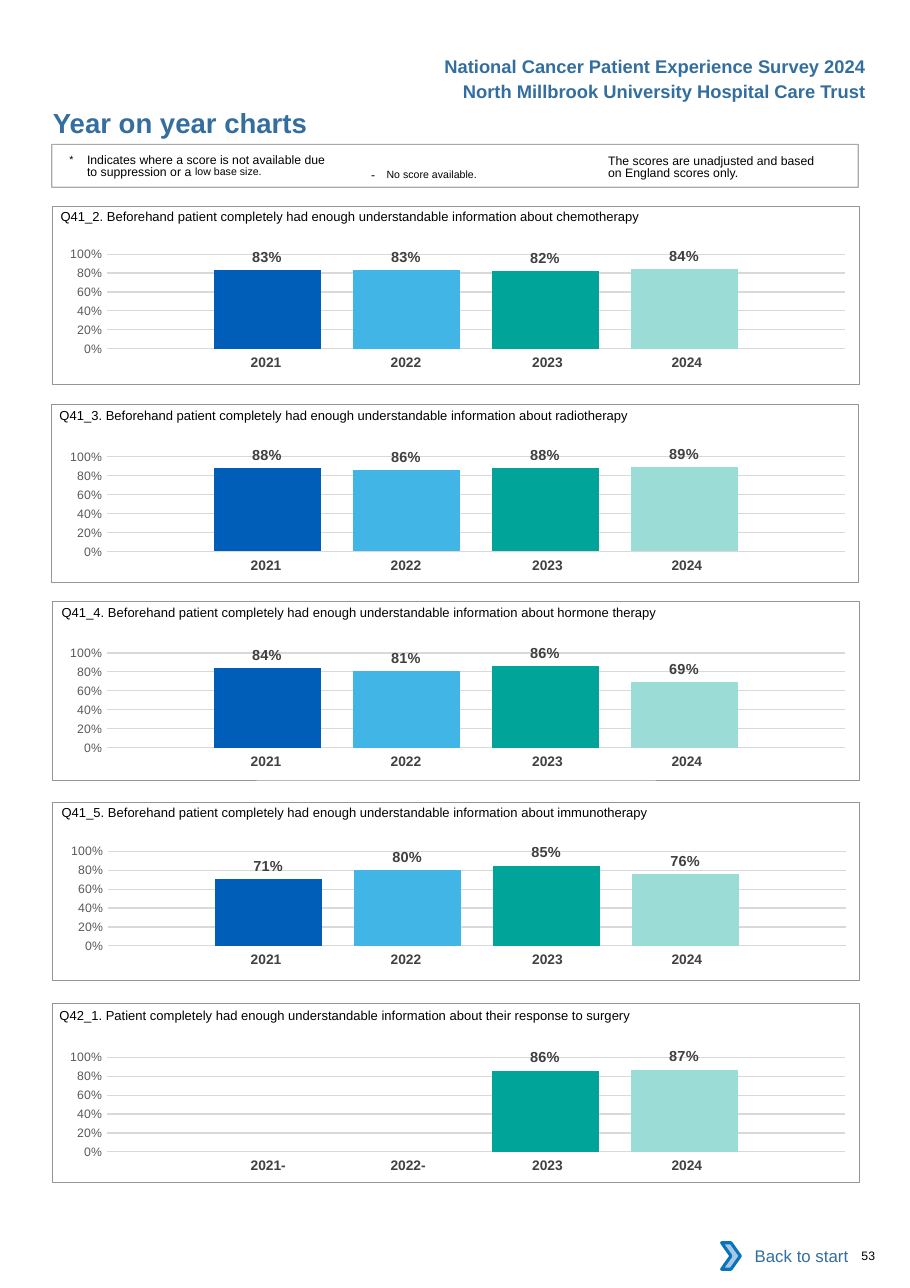
from lxml import etree
from pptx import Presentation
from pptx.chart import data
from pptx.dml import color
from pptx.enum import chart as ec, shapes, text
from pptx.oxml import ns, parse_xml
from pptx.util import Pt

HUES = {
    "ink": "000000", "head": "336E9F", "frame": "939598", "white": "FFFFFF",
    "year": "414042", "tick": "595959", "label": "404040", "grid": "D9D9D9",
    "arrow": "A8C7E9", "edge": "0A74BB",
}
BARS = ["005EB8", "41B6E6", "00A499", "9CDCD7"]
PLAIN = "{2D5ABB26-0587-4C30-8999-92F81FD0307C}"
ALIGN = {"l": text.PP_ALIGN.LEFT, "c": text.PP_ALIGN.CENTER,
         "r": text.PP_ALIGN.RIGHT}
ENOUGH = "completely had enough understandable information about"
INSET = (7.2, 3.6, 7.2, 3.6)


def rgb(hue):
    return color.RGBColor.from_string(HUES.get(hue, hue))


def style(font, size, hue, bold=False):
    font.name, font.size, font.bold = "Arial", Pt(size), bold
    font.color.rgb = rgb(hue)


def put(frame, txt, size=8, hue="ink", bold=False, align="l", pad=(0, 0, 0, 0),
        line=None, hang=0):
    """Fill a frame; txt is a string or a list of (string, run options)."""
    frame.word_wrap = True
    (frame.margin_left, frame.margin_top,
     frame.margin_right, frame.margin_bottom) = map(Pt, pad)
    par = frame.paragraphs[0]
    par.alignment = ALIGN[align]
    if line:
        par.line_spacing = Pt(line)
    if hang:
        ppr = par._p.get_or_add_pPr()
        ppr.set("marL", str(Pt(hang)))
        ppr.set("indent", str(-Pt(hang)))
    for part, opts in [(txt, {})] if isinstance(txt, str) else txt:
        run = par.add_run()
        run.text = part
        style(run.font, opts.get("size", size), hue, bold)
        for key in ("baseline", "spc"):
            if key in opts:
                run._r.get_or_add_rPr().set(key, str(opts[key]))


class Page:
    def __init__(self, deck):
        self.slide = deck.slides.add_slide(deck.slide_layouts[6])
        self.items = self.slide.shapes

    def text(self, x, y, w, h, txt, **fmt):
        box = self.items.add_textbox(Pt(x), Pt(y), Pt(w), Pt(h))
        put(box.text_frame, txt, **fmt)

    def shape(self, kind, x, y, w, h, fill=None, line=None, width=0.5):
        item = self.items.add_shape(kind, Pt(x), Pt(y), Pt(w), Pt(h))
        item.shadow.inherit = False
        if fill:
            item.fill.solid()
            item.fill.fore_color.rgb = rgb(fill)
        else:
            item.fill.background()
        if line:
            item.line.color.rgb = rgb(line)
            item.line.width = Pt(width)
        else:
            item.line.fill.background()
        return item

    def rect(self, *place, **look):
        return self.shape(shapes.MSO_SHAPE.RECTANGLE, *place, **look)

    def years(self, x, y, names):
        widths = [91.44, 91.44, 96.48, 91.44]
        table = self.items.add_table(1, 4, Pt(x), Pt(y), Pt(sum(widths)),
                                     Pt(19.44)).table
        table.first_row = table.horz_banding = False
        table._tbl.tblPr[0].text = PLAIN
        for i, (name, wide) in enumerate(zip(names, widths)):
            table.columns[i].width = Pt(wide)
            cell = table.cell(0, i)
            cell.fill.background()
            left = 10.08 if name.endswith("-") else 7.2
            right = (0, 0, 2.88, 8.64)[i]
            put(cell.text_frame, name, size=9, hue="year", bold=True, align="c")
            cell.margin_left, cell.margin_right = Pt(left), Pt(right)
            cell.margin_top = cell.margin_bottom = Pt(3.6)
        table.rows[0].height = Pt(19.44)

    def chart(self, x, y, w, h, scores):
        feed = data.CategoryChartData(number_format="0%")
        feed.categories = ["1"]
        for i, score in enumerate(scores, 1):
            feed.add_series(f"Series {i}", [score])
        chart = self.items.add_chart(ec.XL_CHART_TYPE.COLUMN_CLUSTERED, Pt(x),
                                     Pt(y), Pt(w), Pt(h), feed).chart
        chart.has_legend = chart.has_title = False
        chart.font.name, chart.font.size = "Calibri", Pt(10)
        chart.font.color.rgb = rgb("ink")
        chart.category_axis.visible = False

        # Percent axis
        axis = chart.value_axis
        axis.minimum_scale, axis.maximum_scale, axis.major_unit = 0, 1, 0.2
        axis.major_tick_mark = axis.minor_tick_mark = ec.XL_TICK_MARK.NONE
        axis.format.line.fill.background()
        grid = axis.major_gridlines.format.line
        grid.color.rgb, grid.width = rgb("grid"), Pt(0.75)
        ticks = axis.tick_labels
        ticks.number_format, ticks.number_format_is_linked = "0%", False
        style(ticks.font, 8, "tick")

        # Bars and labels
        plot = chart.plots[0]
        plot.gap_width, plot.overlap, plot.vary_by_categories = 200, -30, False
        for bar, hue in zip(plot.series, BARS):
            bar.format.fill.solid()
            bar.format.fill.fore_color.rgb = rgb(hue)
            tags = bar.data_labels
            tags.show_value = True
            tags.position = ec.XL_LABEL_POSITION.OUTSIDE_END
            tags.number_format, tags.number_format_is_linked = "0%", False
            style(tags.font, 9.5, "label", True)

        # Inner plot area, in thousandths of the chart
        area = chart._chartSpace.chart.plotArea
        for old in area.findall(ns.qn("c:layout")):
            area.remove(old)
        spots = [("layoutTarget", "inner"), ("xMode", "edge"), ("yMode", "edge")]
        spots += [(k, v / 1000) for k, v in zip("xywh", (79, 145, 915, 666))]
        body = "".join(f'<c:{k} val="{v}"/>' for k, v in spots)
        area.insert(0, parse_xml(f'<c:layout {ns.nsdecls("c")}><c:manualLayout>'
                                 f'{body}</c:manualLayout></c:layout>'))


def main():
    deck = Presentation()
    deck.slide_width, deck.slide_height = Pt(594.72), Pt(841.68)
    page = Page(deck)

    # Headings
    heads = [(32.8, "National Cancer Patient Experience Survey 2024"),
             (48.96, "North Millbrook University Hospital Care Trust")]
    for y, head in heads:
        page.text(213, y, 360, 21.6, head, size=12, hue="head", bold=True,
                  align="r", pad=INSET)
    page.text(34.6, 69.4, 324, 21.6, "Year on year charts",
              size=18, hue="head", bold=True)

    # Key to the scores
    key = page.rect(33.84, 94.32, 527.04, 28.08, line="frame", width=0.75)
    tone = key.line._ln.find(".//" + ns.qn("a:srgbClr"))
    etree.SubElement(tone, ns.qn("a:alpha")).set("val", "80000")
    page.text(45.36, 99.36, 171, 18, [
        ("*\t", {"size": 12, "baseline": 3000}),
        ("Indicates where a score is not available due to suppression or a ", {}),
        ("low base size.", {"size": 12, "baseline": 7000}),
    ], pad=(0, 2.16, 0, 0), line=8.1, hang=11.52)
    page.text(235.44, 101.52, 131.76, 17.28, [
        ("- ", {"spc": 260}),
        ("No score available.", {"size": 12, "baseline": 3000}),
    ], pad=INSET)
    page.text(397.44, 99.36, 142, 19.44,
              "The scores are unadjusted and based on England scores only.",
              pad=(0, 2.16, 0, 0), line=8.1)

    # Questions: title, title x and y, frame x and y, chart x and y, scores
    asks = [
        (f"Q41_2. Beforehand patient {ENOUGH} chemotherapy",
         39.6, 129.6, 34.56, 134.64, 28.08, 152.64, (0.83, 0.83, 0.82, 0.84)),
        (f"Q41_3. Beforehand patient {ENOUGH} radiotherapy",
         38.88, 259.92, 33.84, 264.24, 28.08, 285.12, (0.88, 0.86, 0.88, 0.89)),
        (f"Q41_4. Beforehand patient {ENOUGH} hormone therapy",
         40.32, 388.8, 34.56, 393.12, 28.08, 413.28, (0.84, 0.81, 0.86, 0.69)),
        (f"Q41_5. Beforehand patient {ENOUGH} immunotherapy",
         40.32, 519.12, 34.56, 524.16, 28.8, 542.88, (0.71, 0.8, 0.85, 0.76)),
        (f"Q42_1. Patient {ENOUGH} their response to surgery",
         38.88, 651.6, 34.56, 655.92, 28.08, 677.52, (None, None, 0.86, 0.87)),
    ]
    for name, tx, ty, fx, fy, cx, cy, scores in asks:
        page.rect(fx, fy, 527.04, 116.64, line="frame")
        page.years(124.56, cy + 75.8, [
            f"{year}-" if score is None else str(year)
            for year, score in enumerate(scores, 2021)])
        page.chart(cx, cy, 527.04, 92.88, scores)
        page.text(tx, ty, 510, 17.28, name, size=8.5, pad=(0, 6.48, 0, 0))

    # Footer
    back = page.rect(476.64, 805.68, 84.96, 30.24, fill="white")
    put(back.text_frame, "Back to start", size=11, hue="head", align="r",
        pad=INSET)
    back.text_frame.vertical_anchor = text.MSO_ANCHOR.MIDDLE
    page.shape(shapes.MSO_SHAPE.CHEVRON, 471.6, 812.16, 12.24, 17.28,
               fill="arrow", line="edge", width=2)
    page.text(563, 815.76, 29, 9.36, "53")

    deck.save("out.pptx")


if __name__ == "__main__":
    main()
